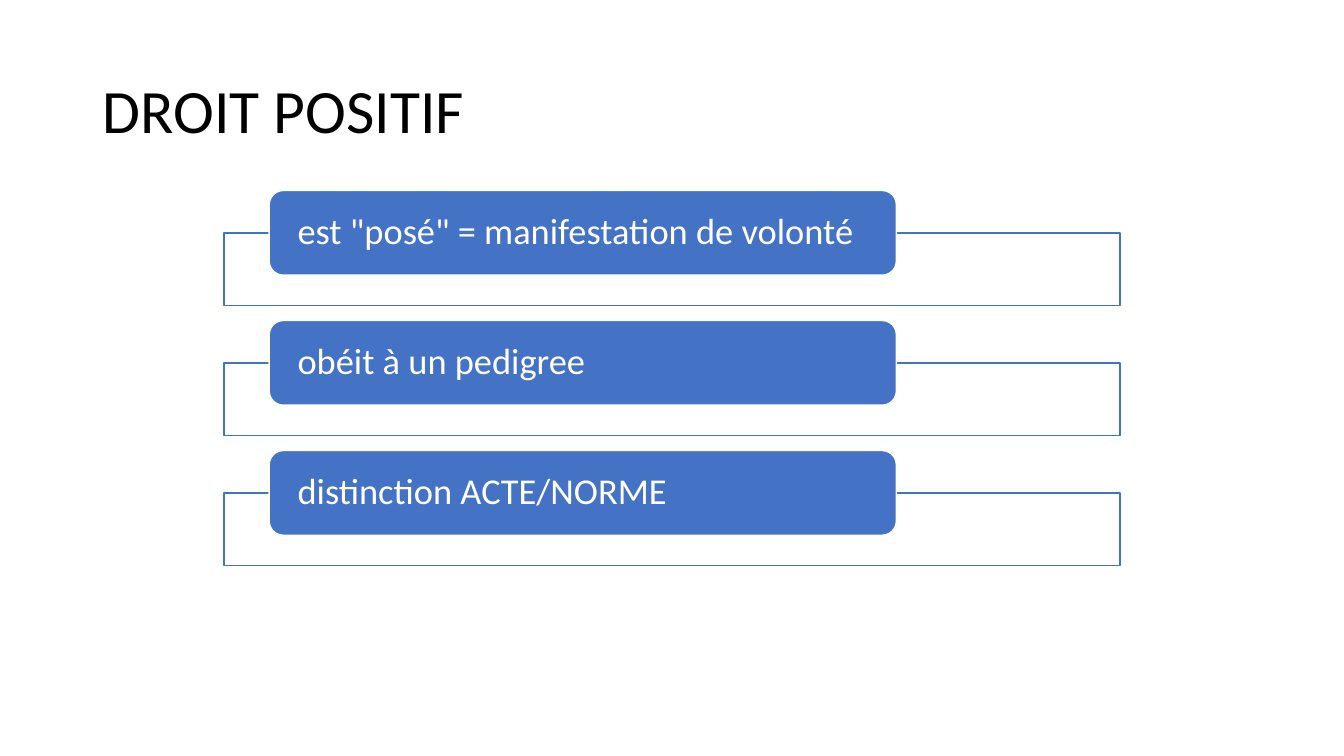
from lxml import etree
from pptx import Presentation
from pptx.dml.color import RGBColor
from pptx.enum.shapes import MSO_SHAPE
from pptx.enum.text import MSO_ANCHOR, PP_ALIGN
from pptx.oxml.ns import qn
from pptx.util import Inches, Pt

RECT = MSO_SHAPE.RECTANGLE
ROUNDED = MSO_SHAPE.ROUNDED_RECTANGLE
MIDDLE = MSO_ANCHOR.MIDDLE
LEFT = PP_ALIGN.LEFT

WHITE, BLACK, BLUE = "FFFFFF", "000000", "4472C4"
POINTS = [
    'est "posé" = manifestation de volonté',
    "obéit à un pedigree",
    "distinction ACTE/NORME",
]
TOP, PITCH = 1.89, 1.29


def rgb(value):
    return RGBColor.from_string(value)


class SlideBuilder:
    font = "Calibri"
    line_spacing = 0.9

    def __init__(self, prs):
        self.slide = prs.slides.add_slide(prs.slide_layouts[6])

    def set_text(self, sp, text, size, color, inset_x, inset_y):
        tf = sp.text_frame
        frame_format = {
            "word_wrap": True,
            "vertical_anchor": MIDDLE,
            "margin_left": Inches(inset_x),
            "margin_right": Inches(inset_x),
            "margin_top": Inches(inset_y),
            "margin_bottom": Inches(inset_y),
        }
        for name, value in frame_format.items():
            setattr(tf, name, value)
        p = tf.paragraphs[0]
        p.alignment = LEFT
        p.line_spacing = self.line_spacing
        r = p.add_run()
        r.text = text
        for name, value in {"name": self.font, "size": Pt(size)}.items():
            setattr(r.font, name, value)
        r.font.color.rgb = rgb(color)

    def title(self, text, box):
        sp = self.slide.shapes.add_textbox(*map(Inches, box))
        self.set_text(sp, text, 44, BLACK, 0.1, 0.05)

    def shape(self, kind, box, fill, line, opacity=100):
        sp = self.slide.shapes.add_shape(kind, *map(Inches, box))
        sp.shadow.inherit = False
        sp.fill.solid()
        sp.fill.fore_color.rgb = rgb(fill)
        sp.line.color.rgb = rgb(line)
        sp.line.width = Pt(1)
        if opacity < 100:
            color = sp.element.spPr.find(qn("a:solidFill"))[0]
            etree.SubElement(color, qn("a:alpha"), val=str(opacity * 1000))
        return sp

    def point(self, text, top):
        self.shape(RECT, (2.22, top + 0.42, 8.89, 0.72), WHITE, BLUE, 90)
        label = self.shape(ROUNDED, (2.67, top, 6.22, 0.84), BLUE, WHITE)
        self.set_text(label, text, 26, WHITE, 0.24, 0)


def main():
    prs = Presentation()
    prs.slide_width = Inches(13.33)
    prs.slide_height = Inches(7.5)
    builder = SlideBuilder(prs)
    builder.title("DROIT POSITIF", (0.92, 0.4, 11.5, 1.45))
    for i, text in enumerate(POINTS):
        builder.point(text, TOP + i * PITCH)
    prs.save("out.pptx")


if __name__ == "__main__":
    main()
